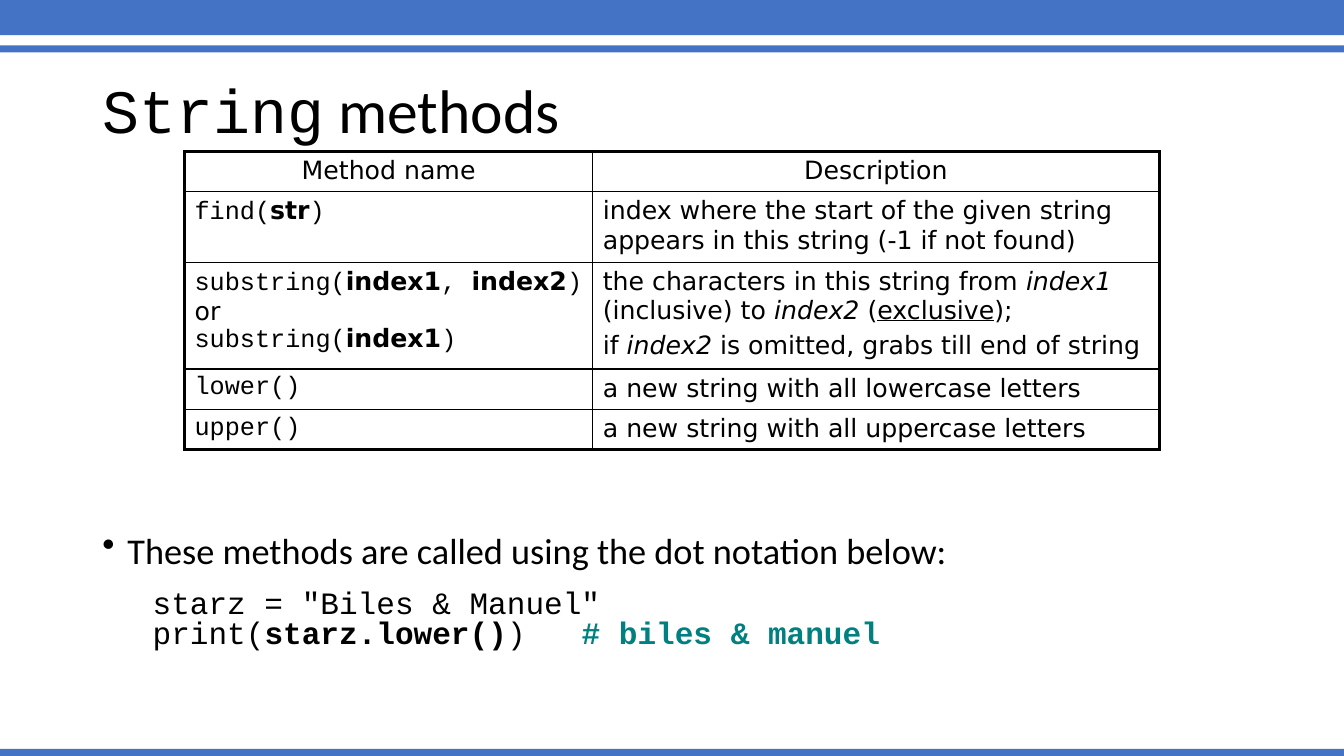
from dataclasses import dataclass

from lxml import etree
from pptx import Presentation
from pptx.dml.color import RGBColor
from pptx.enum.shapes import MSO_SHAPE
from pptx.enum.text import MSO_ANCHOR, PP_ALIGN
from pptx.oxml.ns import qn
from pptx.util import Pt

RECT = MSO_SHAPE.RECTANGLE
MIDDLE = MSO_ANCHOR.MIDDLE
CENTER, LEFT = PP_ALIGN.CENTER, PP_ALIGN.LEFT
BLACK = RGBColor(0x00, 0x00, 0x00)
BLUE = RGBColor(0x44, 0x72, 0xC4)
TEAL = RGBColor(0x00, 0x80, 0x80)
MONO, SANS, BODY = "Courier New", "DejaVu Sans", "Calibri"
SLIDE_W, SLIDE_H = 960, 540
MARGIN, TEXT_W = 66, 828
CODE_SIZE = 22.2
OUTER, INNER = 2.25, 1


@dataclass(frozen=True)
class Run:
    text: str
    font: str = SANS
    size: float = 18
    bold: bool = False
    italic: bool = False
    underline: bool = False
    color: RGBColor = BLACK


@dataclass(frozen=True)
class Para:
    runs: tuple[Run, ...]
    spacing: float = 1.0
    before: float = 0
    align: PP_ALIGN = LEFT
    margin: float = 0
    bullet: str = ""


@dataclass(frozen=True)
class Bar:
    top: float
    height: float


def para(*runs: Run, **fmt) -> Para:
    return Para(runs, **fmt)


def mono(text: str) -> Run:
    return Run(text, MONO)


def arg(text: str) -> Run:
    return Run(text, bold=True)


def ital(text: str) -> Run:
    return Run(text, italic=True)


def code(text: str, **fmt) -> Run:
    return Run(text, MONO, CODE_SIZE, **fmt)


BARS = [Bar(0, 25.2), Bar(32.4, 5), Bar(535, 5)]
ROW_HEIGHTS = [28.8, 50.4, 76.3, 28.8, 28.8]
COL_WIDTHS = [291.6, 404.6]
TITLE = [para(Run("String", MONO, 44), Run(" methods", BODY, 44), spacing=0.9)]
USAGE = [
    para(Run("These methods are called using the dot notation below:", BODY, 25.9),
         spacing=0.7, margin=18, bullet="•"),
    para(code('starz = "Biles & Manuel"'), spacing=0.6, before=19, margin=36),
    para(code("print("), code("starz.lower()", bold=True), code(")   "),
         code("# biles & manuel", bold=True, color=TEAL),
         spacing=0.6, before=5, margin=36),
]
ROWS = [
    ([para(Run("Method name"), align=CENTER)],
     [para(Run("Description"), align=CENTER)]),
    ([para(mono("find("), arg("str"), mono(")"))],
     [para(Run("index where the start of the given string appears in this string "
               "(-1 if not found)"))]),
    ([para(mono("substring("), arg("index1"), mono(", "), arg("index2"), mono(")")),
      para(Run("or"), spacing=0.7, before=4),
      para(mono("substring("), arg("index1"), mono(")"), spacing=0.7, before=4)],
     [para(Run("the characters in this string from "), ital("index1"),
           Run(" (inclusive) to "), ital("index2"), Run(" ("),
           Run("exclusive", underline=True), Run(");")),
      para(Run("if "), ital("index2"),
           Run(" is omitted, grabs till end of string"), before=4)]),
    ([para(mono("lower()"))], [para(Run("a new string with all lowercase letters"))]),
    ([para(mono("upper()"))], [para(Run("a new string with all uppercase letters"))]),
]


def add_run(p, text: str, *, font: str, size: float, bold: bool, italic: bool,
            underline: bool, color: RGBColor) -> None:
    r = p.add_run()
    r.text = text
    f = r.font
    f.name, f.size = font, Pt(size)
    f.bold, f.italic, f.underline = bold, italic, underline
    f.color.rgb = color


def fill_text(tf, paras: list[Para]) -> None:
    for i, item in enumerate(paras):
        p = tf.add_paragraph() if i else tf.paragraphs[0]
        p.alignment = item.align
        p.line_spacing = item.spacing
        p.space_before = Pt(item.before)
        pPr = p._p.get_or_add_pPr()
        pPr.set("marL", str(Pt(item.margin)))
        if item.bullet:
            pPr.set("indent", str(-Pt(item.margin)))
            etree.SubElement(pPr, qn("a:buChar"), char=item.bullet)
        for run in item.runs:
            add_run(p, run.text, font=run.font, size=run.size, bold=run.bold,
                    italic=run.italic, underline=run.underline, color=run.color)


def add_text(s, top: float, height: float, paras: list[Para]):
    sp = s.shapes.add_textbox(Pt(MARGIN), Pt(top), Pt(TEXT_W), Pt(height))
    tf = sp.text_frame
    tf.word_wrap = True
    fill_text(tf, paras)
    return tf


def add_bar(s, bar: Bar) -> None:
    sp = s.shapes.add_shape(RECT, 0, Pt(bar.top), Pt(SLIDE_W), Pt(bar.height))
    sp.shadow.inherit = False
    sp.fill.solid()
    sp.fill.fore_color.rgb = BLUE
    sp.line.fill.background()


def set_border(cell, side: str, width: float) -> None:
    ln = etree.SubElement(cell._tc.get_or_add_tcPr(), qn(f"a:ln{side}"), w=str(Pt(width)))
    fill = etree.SubElement(ln, qn("a:solidFill"))
    etree.SubElement(fill, qn("a:srgbClr"), val=str(BLACK))


def add_method_table(s) -> None:
    frame = s.shapes.add_table(len(ROWS), len(COL_WIDTHS), Pt(131.8), Pt(108),
                               Pt(sum(COL_WIDTHS)), Pt(sum(ROW_HEIGHTS)))
    table = frame.table
    table.first_row = table.horz_banding = False
    for col, width in zip(table.columns, COL_WIDTHS):
        col.width = Pt(width)
    last_row, last_col = len(ROWS) - 1, len(COL_WIDTHS) - 1
    for i, row in enumerate(ROWS):
        table.rows[i].height = Pt(ROW_HEIGHTS[i])
        for j, paras in enumerate(row):
            cell = table.cell(i, j)
            edges = {"L": j == 0, "R": j == last_col, "T": i == 0, "B": i == last_row}
            for side, outer in edges.items():
                set_border(cell, side, OUTER if outer else INNER)
            cell.fill.background()
            fill_text(cell.text_frame, paras)


def main() -> None:
    prs = Presentation()
    prs.slide_width, prs.slide_height = Pt(SLIDE_W), Pt(SLIDE_H)
    s = prs.slides.add_slide(prs.slide_layouts[6])
    for bar in BARS:
        add_bar(s, bar)
    add_text(s, 28.8, 104.4, TITLE).vertical_anchor = MIDDLE
    add_text(s, 382, 104, USAGE)
    add_method_table(s)
    prs.save("out.pptx")


if __name__ == "__main__":
    main()
